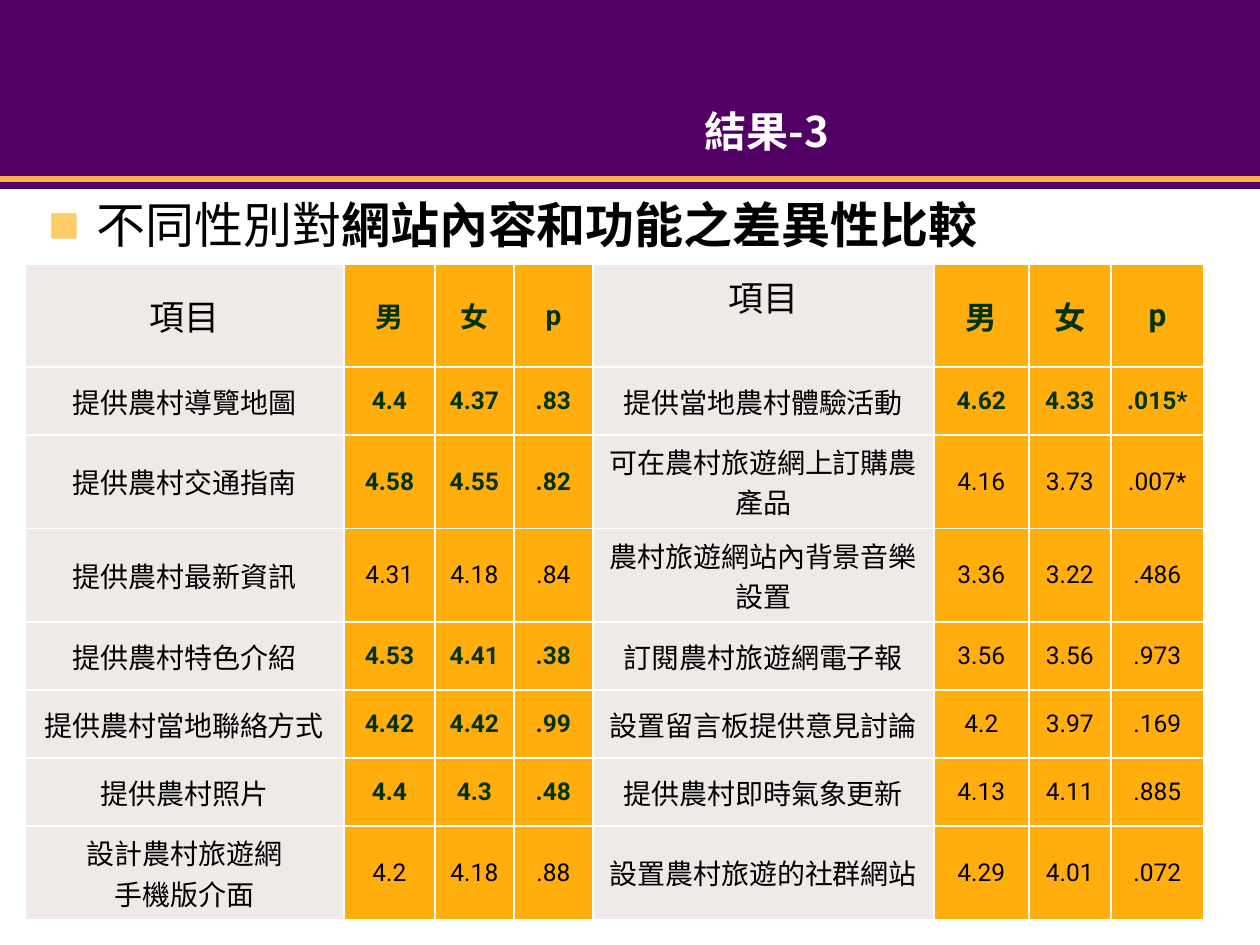
"""Build the results slide comparing website features by gender."""
from dataclasses import dataclass

from lxml import etree
from pptx import Presentation
from pptx.dml.color import RGBColor
from pptx.enum.shapes import MSO_CONNECTOR, MSO_SHAPE
from pptx.enum.text import MSO_ANCHOR, MSO_AUTO_SIZE, PP_ALIGN
from pptx.oxml.ns import qn
from pptx.util import Emu, Pt

RECTANGLE = MSO_SHAPE.RECTANGLE
STRAIGHT = MSO_CONNECTOR.STRAIGHT
TOP, MIDDLE = MSO_ANCHOR.TOP, MSO_ANCHOR.MIDDLE
LEFT, CENTER = PP_ALIGN.LEFT, PP_ALIGN.CENTER
NO_AUTOFIT = MSO_AUTO_SIZE.NONE

EMU_PER_PX = 914400 / 126
CJK_FONT, LATIN_FONT = "Noto Sans CJK SC", "Roboto"
PURPLE, GOLD, BULLET_GOLD = "520063", "FFB24D", "FFCC66"
ITEM_FILL, VALUE_FILL = "EFEAE8", "FFAE0D"
WHITE, BLACK, GREEN = "FFFFFF", "000000", "003300"

COLUMN_WIDTHS = (319, 91, 79, 79, 341, 95, 82, 93)
ROW_HEIGHTS = (103, 68, 93, 94, 68, 68, 68, 93)


@dataclass(frozen=True)
class Entry:
    """One website feature with its mean scores and p value."""
    item: str
    male: str
    female: str
    p_value: str
    bold: bool = False


@dataclass(frozen=True)
class Band:
    """One full-width strip of the page header."""
    top: int
    height: int
    outlined: bool


BANDS = (Band(0, 179, True), Band(179, 10, False))

LEFT_ENTRIES = (
    Entry("提供農村導覽地圖", "4.4", "4.37", ".83", True),
    Entry("提供農村交通指南", "4.58", "4.55", ".82", True),
    Entry("提供農村最新資訊", "4.31", "4.18", ".84"),
    Entry("提供農村特色介紹", "4.53", "4.41", ".38", True),
    Entry("提供農村當地聯絡方式", "4.42", "4.42", ".99", True),
    Entry("提供農村照片", "4.4", "4.3", ".48", True),
    Entry("設計農村旅遊網\n手機版介面", "4.2", "4.18", ".88"),
)
RIGHT_ENTRIES = (
    Entry("提供當地農村體驗活動", "4.62", "4.33", ".015*", True),
    Entry("可在農村旅遊網上訂購農產品", "4.16", "3.73", ".007*"),
    Entry("農村旅遊網站內背景音樂設置", "3.36", "3.22", ".486"),
    Entry("訂閱農村旅遊網電子報", "3.56", "3.56", ".973"),
    Entry("設置留言板提供意見討論", "4.2", "3.97", ".169"),
    Entry("提供農村即時氣象更新", "4.13", "4.11", ".885"),
    Entry("設置農村旅遊的社群網站", "4.29", "4.01", ".072"),
)
HEADER = Entry("項目", "男", "女", "p", True)


def px(length: int) -> Emu:
    """Turn pixels into EMU."""
    return Emu(round(length * EMU_PER_PX))


def color(value: str) -> RGBColor:
    """Turn a hex string into a colour."""
    return RGBColor.from_string(value)


def add_text(paragraph, text: str, *, size: int, font: str = LATIN_FONT,
             fill: str = BLACK, bold: bool = False, align=CENTER) -> None:
    """Add formatted text to a paragraph, breaking lines at newlines."""
    paragraph.alignment = align
    for index, line in enumerate(text.split("\n")):
        if index:
            paragraph.add_line_break()
        run = paragraph.add_run()
        run.text = line
        run.font.size = Pt(size)
        run.font.bold = bold
        run.font.color.rgb = color(fill)
        run.font.name = font
        etree.SubElement(run.font._element, qn("a:ea"), typeface=CJK_FONT)


def place(shape, left: int, top: int, width: int, height: int) -> None:
    """Set the position and size of a shape."""
    shape.left, shape.top = px(left), px(top)
    shape.width, shape.height = px(width), px(height)


def draw_header(slide) -> None:
    """Draw the purple header strips and the gold rule."""
    for band in BANDS:
        shape = slide.shapes.add_shape(
            RECTANGLE, 0, px(band.top), px(1260), px(band.height))
        shape.shadow.inherit = False
        shape.fill.solid()
        shape.fill.fore_color.rgb = color(PURPLE)
        if band.outlined:
            shape.line.color.rgb = color(PURPLE)
            shape.line.width = Pt(1)
        else:
            shape.line.fill.background()
    rule = slide.shapes.add_connector(STRAIGHT, 0, px(179), px(1260), px(179))
    rule.line.color.rgb = color(GOLD)
    rule.line.width = Pt(3)
    etree.SubElement(rule._element.spPr, qn("a:effectLst"))


def prepare_placeholder(slide, shape):
    """Bring a placeholder to the front and return its first paragraph."""
    slide.shapes._spTree.append(shape._element)
    frame = shape.text_frame
    frame.auto_size = NO_AUTOFIT
    frame.vertical_anchor = TOP
    paragraph = frame.paragraphs[0]
    paragraph.line_spacing = 0.9
    return paragraph


def set_bullet(paragraph) -> None:
    """Give a paragraph a small gold square bullet."""
    properties = paragraph._element.get_or_add_pPr()
    properties.set("marL", str(px(48)))
    properties.set("indent", str(-px(48)))
    bullet_color = etree.SubElement(properties, qn("a:buClr"))
    etree.SubElement(bullet_color, qn("a:srgbClr"), val=BULLET_GOLD)
    etree.SubElement(properties, qn("a:buSzPct"), val="65000")
    etree.SubElement(properties, qn("a:buFont"), typeface=CJK_FONT)
    etree.SubElement(properties, qn("a:buChar"), char="■")


def format_cell(cell, fill: str) -> None:
    """Give a cell white borders and a solid fill."""
    properties = cell._tc.get_or_add_tcPr()
    for side in ("lnL", "lnR", "lnT", "lnB"):
        border = etree.SubElement(properties, qn(f"a:{side}"), w=str(Pt(1)))
        solid = etree.SubElement(border, qn("a:solidFill"))
        etree.SubElement(solid, qn("a:srgbClr"), val=WHITE)
    cell.fill.solid()
    cell.fill.fore_color.rgb = color(fill)
    cell.vertical_anchor = MIDDLE


def fill_entry(table, row: int, column: int, entry: Entry, *,
               item_size: int = 16, value_size: int = 14) -> None:
    """Write one entry into four neighbouring cells."""
    item_cell = table.cell(row, column)
    format_cell(item_cell, ITEM_FILL)
    add_text(item_cell.text_frame.paragraphs[0], entry.item,
             size=item_size, font=CJK_FONT)
    values = (entry.male, entry.female, entry.p_value)
    for offset, value in enumerate(values, start=1):
        cell = table.cell(row, column + offset)
        format_cell(cell, VALUE_FILL)
        add_text(cell.text_frame.paragraphs[0], value, size=value_size,
                 fill=GREEN if entry.bold else BLACK, bold=entry.bold)


def draw_table(slide) -> None:
    """Draw the two-sided comparison table."""
    table = slide.shapes.add_table(
        len(ROW_HEIGHTS), len(COLUMN_WIDTHS), px(25), px(264),
        px(sum(COLUMN_WIDTHS)), px(sum(ROW_HEIGHTS))).table
    table.first_row = table.horz_banding = False
    for column, width in zip(table.columns, COLUMN_WIDTHS):
        column.width = px(width)
    for row, height in zip(table.rows, ROW_HEIGHTS):
        row.height = px(height)
    sides = ((0, LEFT_ENTRIES, 16), (4, RIGHT_ENTRIES, 18))
    for start, entries, header_size in sides:
        fill_entry(table, 0, start, HEADER, item_size=20, value_size=header_size)
        for row, entry in enumerate(entries, start=1):
            fill_entry(table, row, start, entry)
    table.cell(0, 4).vertical_anchor = TOP


def main() -> None:
    """Build and save the presentation."""
    presentation = Presentation()
    presentation.slide_width, presentation.slide_height = px(1260), px(945)
    slide = presentation.slides.add_slide(presentation.slide_layouts[1])
    title, body = slide.placeholders
    draw_header(slide)
    place(title, 305, 105, 924, 84)
    add_text(prepare_placeholder(slide, title), "結果-3",
             size=24, font=CJK_FONT, fill=WHITE, bold=True)
    place(body, 36, 195, 1197, 693)
    paragraph = prepare_placeholder(slide, body)
    set_bullet(paragraph)
    add_text(paragraph, "不同性別對", size=28, align=LEFT)
    add_text(paragraph, "網站內容和功能之差異性比較", size=28, bold=True, align=LEFT)
    draw_table(slide)
    presentation.save("out.pptx")


if __name__ == "__main__":
    main()
